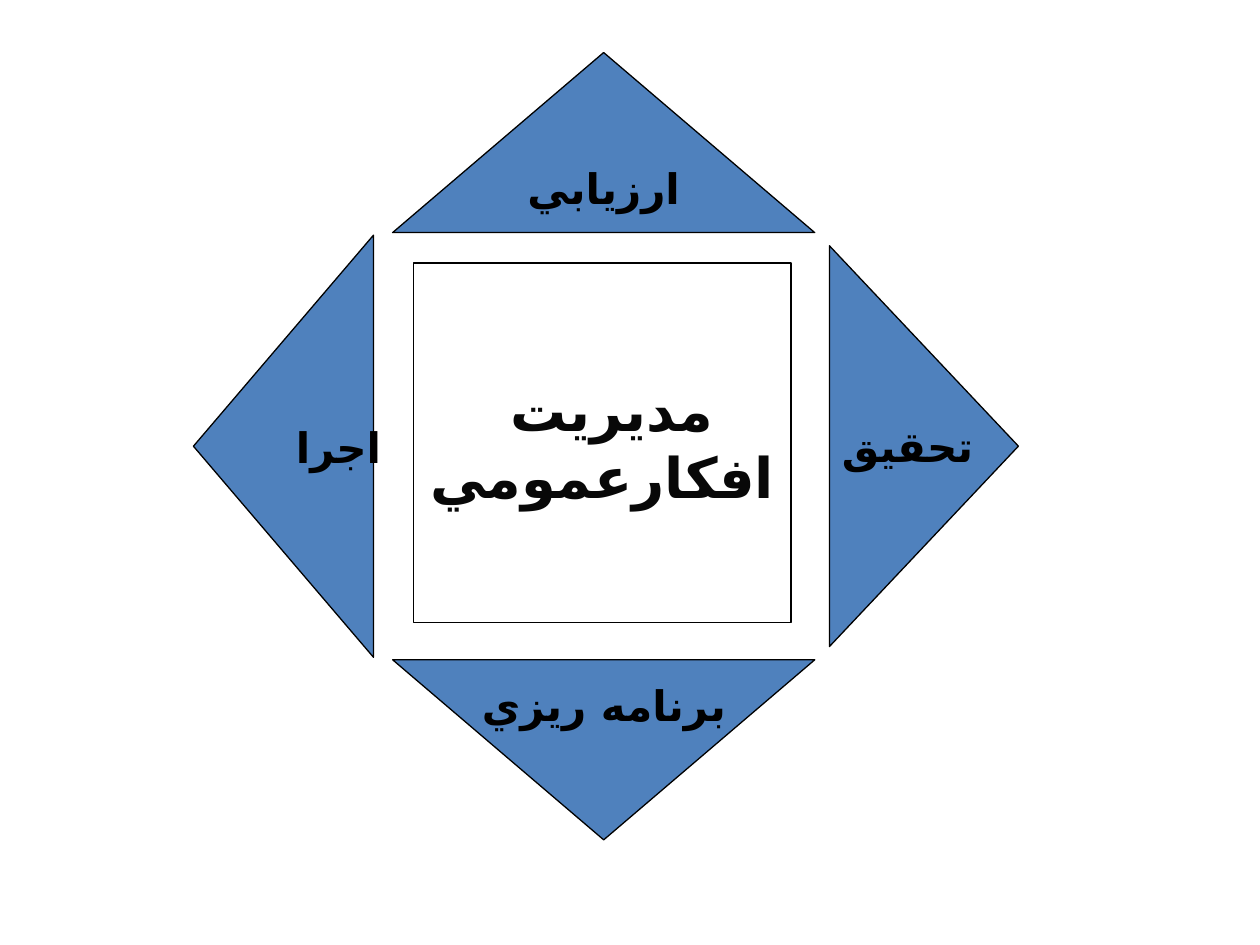
from pptx import Presentation
from pptx.dml.color import RGBColor
from pptx.enum.shapes import MSO_SHAPE
from pptx.enum.text import MSO_ANCHOR, PP_ALIGN
from pptx.oxml.ns import qn
from pptx.util import Cm, Pt
from lxml.etree import SubElement

BLUE = RGBColor(0x4F, 0x81, 0xBD)
WHITE = RGBColor(0xFF, 0xFF, 0xFF)
BLACK = RGBColor(0x00, 0x00, 0x00)
NEAR_BLACK = RGBColor(0x08, 0x08, 0x08)
FONT = "Calibri"
ARABIC_FONT = "DejaVu Sans"

# base and depth of a triangle
FLAT = (8.51, 3.63)
DEEP = (8.08, 3.81)

# label, horizontal and vertical direction from the centre, size, rotation, body properties
STAGES = [
    ("ارزيابي", 0, -1, FLAT, 0, {}),
    ("برنامه ريزي", 0, 1, FLAT, 180, {"rot": "10800000"}),
    ("اجرا", -1, 0, FLAT, 270, {"vert": "eaVert"}),
    ("تحقيق", 1, 0, DEEP, 90, {"rot": "10800000", "vert": "eaVert"}),
]


def write_text(shape, lines, size=24, color=BLACK, body=None):
    """Write centred, bold, right-to-left lines into a shape."""
    frame = shape.text_frame
    frame.word_wrap = False
    frame.vertical_anchor = MSO_ANCHOR.MIDDLE
    for name, value in (body or {}).items():
        frame._txBody.bodyPr.set(name, value)
    for index, line in enumerate(lines):
        paragraph = frame.add_paragraph() if index else frame.paragraphs[0]
        paragraph.alignment = PP_ALIGN.CENTER
        paragraph._p.get_or_add_pPr().set("rtl", "1")
        run = paragraph.add_run()
        run.text = line
        run.font.size = Pt(size)
        run.font.bold = True
        run.font.name = FONT
        run.font.color.rgb = color
        SubElement(run._r.get_or_add_rPr(), qn("a:cs"), typeface=ARABIC_FONT)


def add_centred_shape(shapes, kind, x, y, width, height, fill):
    shape = shapes.add_shape(
        kind, Cm(x - width / 2), Cm(y - height / 2), Cm(width), Cm(height)
    )
    shape.shadow.inherit = False
    shape.fill.solid()
    shape.fill.fore_color.rgb = fill
    shape.line.color.rgb = BLACK
    shape.line.width = Pt(0.75)
    return shape


def add_cycle(slide, left, top, width, height):
    """Place four outward triangles around a central square."""
    shapes = slide.shapes.add_group_shape().shapes
    x, y = left + width / 2, top + height / 2
    reach_across = (width - DEEP[1]) / 2
    reach_down = (height - FLAT[1]) / 2
    for label, across, down, (base, depth), rotation, body in STAGES:
        triangle = add_centred_shape(
            shapes, MSO_SHAPE.FLOWCHART_EXTRACT,
            x + across * reach_across, y + down * reach_down, base, depth, BLUE,
        )
        triangle.rotation = rotation
        write_text(triangle, [label], body=body)
    centre = add_centred_shape(
        shapes, MSO_SHAPE.RECTANGLE, x - 0.03, y - 0.07, 7.62, 7.24, WHITE
    )
    write_text(centre, ["مديريت ", "افكارعمومي"], size=32, color=NEAR_BLACK)


def main():
    presentation = Presentation()
    presentation.slide_width = Cm(25.4)
    presentation.slide_height = Cm(19.05)
    slide = presentation.slides.add_slide(presentation.slide_layouts[6])
    add_cycle(slide, left=3.81, top=1.06, width=16.72, height=15.87)
    presentation.save("out.pptx")


if __name__ == "__main__":
    main()
